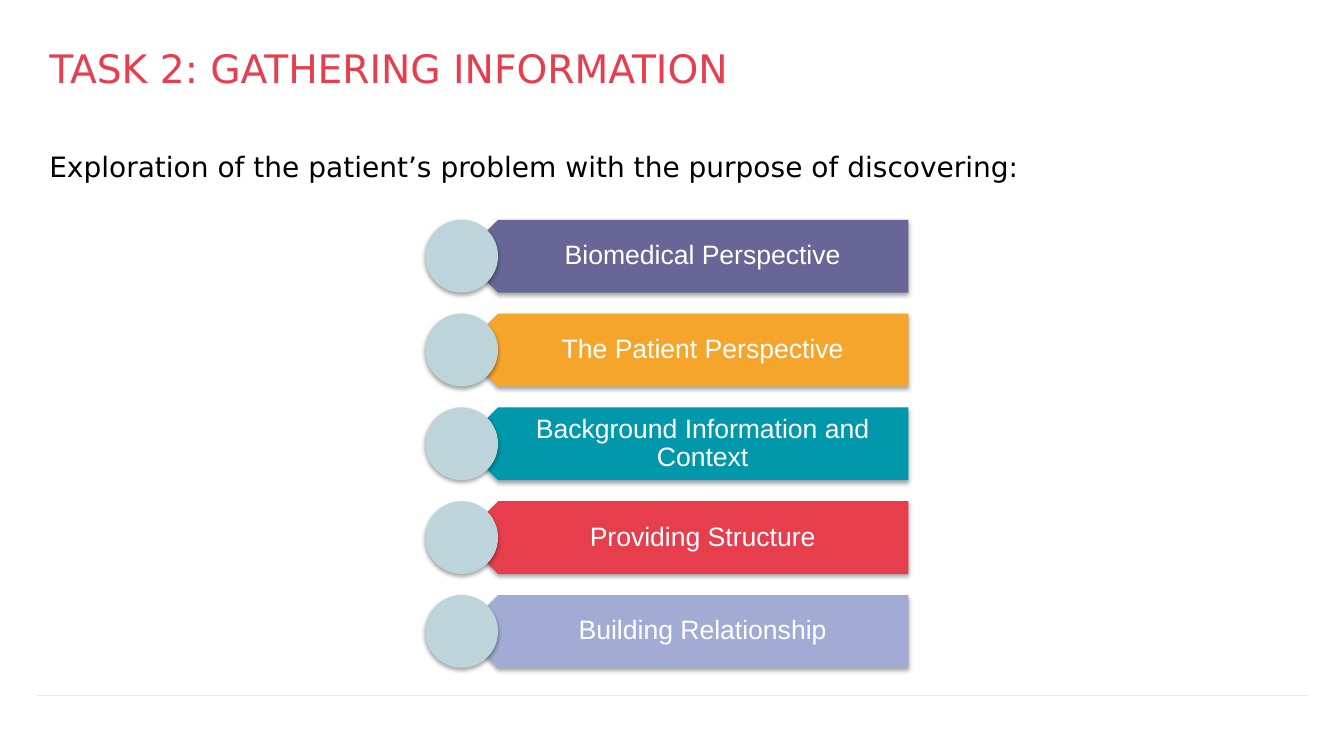
from dataclasses import dataclass

from lxml import etree
from pptx import Presentation
from pptx.dml.color import RGBColor
from pptx.enum.shapes import MSO_CONNECTOR, MSO_SHAPE
from pptx.enum.text import MSO_ANCHOR, MSO_AUTO_SIZE, PP_ALIGN
from pptx.oxml import parse_xml
from pptx.oxml.ns import nsdecls, qn
from pptx.util import Pt


@dataclass(frozen=True)
class Theme:
    heading_font: str = "DejaVu Sans"
    label_font: str = "Arial"
    title_size: int = 28
    body_size: int = 20
    label_size: int = 19
    red: str = "E63E4D"
    black: str = "000000"
    white: str = "FFFFFF"
    rule: str = "262626"
    circle: str = "BDD4DA"
    purple: str = "676696"
    orange: str = "F5A52B"
    teal: str = "0098AA"
    lavender: str = "A1ABD3"


theme = Theme()


def write(shape, text, font, size, color, anchor, alignment, insets):
    frame = shape.text_frame
    frame.text = text
    frame.word_wrap = True
    frame.auto_size = MSO_AUTO_SIZE.NONE
    frame.vertical_anchor = anchor
    (frame.margin_left, frame.margin_top,
     frame.margin_right, frame.margin_bottom) = map(Pt, insets)
    paragraph = frame.paragraphs[0]
    paragraph.alignment = alignment
    paragraph.space_before = Pt(0)
    paragraph.font.name = font
    paragraph.font.size = Pt(size)
    paragraph.font.color.rgb = RGBColor.from_string(color)
    return paragraph


def add_shadowed(preset, left, top, width, height, color):
    """Add a borderless filled shape with a soft shadow straight below it."""
    shape = slide.shapes.add_shape(preset, Pt(left), Pt(top), Pt(width), Pt(height))
    shape.fill.solid()
    shape.fill.fore_color.rgb = RGBColor.from_string(color)
    shape.line.fill.background()
    shape.shadow.inherit = False
    effects = shape._element.spPr.find(qn("a:effectLst"))
    effects.append(parse_xml(
        f'<a:outerShdw {nsdecls("a")} blurRad="{Pt(3.1)}" dist="{Pt(1.8)}" '
        f'dir="5400000" rotWithShape="0"><a:srgbClr val="{theme.black}">'
        '<a:alpha val="35000"/></a:srgbClr></a:outerShdw>'))
    return shape


presentation = Presentation()
presentation.slide_width = Pt(960)
presentation.slide_height = Pt(540)
slide = presentation.slides.add_slide(presentation.slide_layouts[1])

# Title and introduction
title = slide.shapes.title
title.left, title.top, title.width, title.height = map(Pt, (28, 21.6, 883, 51))
write(title, "TASK 2: GATHERING INFORMATION", theme.heading_font, theme.title_size,
      theme.red, MSO_ANCHOR.BOTTOM, PP_ALIGN.LEFT, (7.2,) * 4)

body = slide.placeholders[1]
body.left, body.top, body.width, body.height = map(Pt, (28, 99.4, 899, 391))
body.text_frame.text = ""
properties = body.text_frame.paragraphs[0]._p.get_or_add_pPr()
introduction = write(
    body, "Exploration of the patient’s problem with the purpose of discovering:",
    theme.heading_font, theme.body_size, theme.black,
    MSO_ANCHOR.TOP, PP_ALIGN.LEFT, (7.2,) * 4)
properties = introduction._p.get_or_add_pPr()
properties.set("marL", "0")
properties.set("indent", "0")
bullet_none = etree.Element(qn("a:buNone"))
properties.find(qn("a:defRPr")).addprevious(bullet_none)

# Footer rule
rule = slide.shapes.add_connector(
    MSO_CONNECTOR.STRAIGHT, Pt(26.6), Pt(496.8), Pt(933.8), Pt(496.8))
rule.line.width = Pt(0.25)
rule.line.color.rgb = RGBColor.from_string(theme.rule)
rule_color = rule._element.spPr.find(".//" + qn("a:srgbClr"))
etree.SubElement(rule_color, qn("a:alpha")).set("val", "31000")
etree.SubElement(rule._element.spPr, qn("a:effectLst"))

# Five banners, each with a circle over its tip
banners = [
    ("Biomedical Perspective", theme.purple),
    ("The Patient Perspective", theme.orange),
    ("Background Information and Context", theme.teal),
    ("Providing Structure", theme.red),
    ("Building Relationship", theme.lavender),
]
first_top, pitch, banner_height = 157, 67, 52
tip_left, banner_width = 329.8, 319
circle_left = tip_left - banner_height / 2
label_left = tip_left + banner_height / 4

for row, (label, color) in enumerate(banners):
    top = first_top + row * pitch
    banner = add_shadowed(MSO_SHAPE.PENTAGON, tip_left, top,
                          banner_width, banner_height, color)
    banner.rotation = 180
    label_box = slide.shapes.add_textbox(
        Pt(label_left), Pt(top), Pt(banner_width - banner_height / 4), Pt(banner_height))
    paragraph = write(label_box, label, theme.label_font, theme.label_size, theme.white,
                      MSO_ANCHOR.MIDDLE, PP_ALIGN.CENTER, (23, 5.8, 10.8, 5.8))
    paragraph.line_spacing = 0.9
    add_shadowed(MSO_SHAPE.OVAL, circle_left, top,
                 banner_height, banner_height, theme.circle)

presentation.save("out.pptx")
